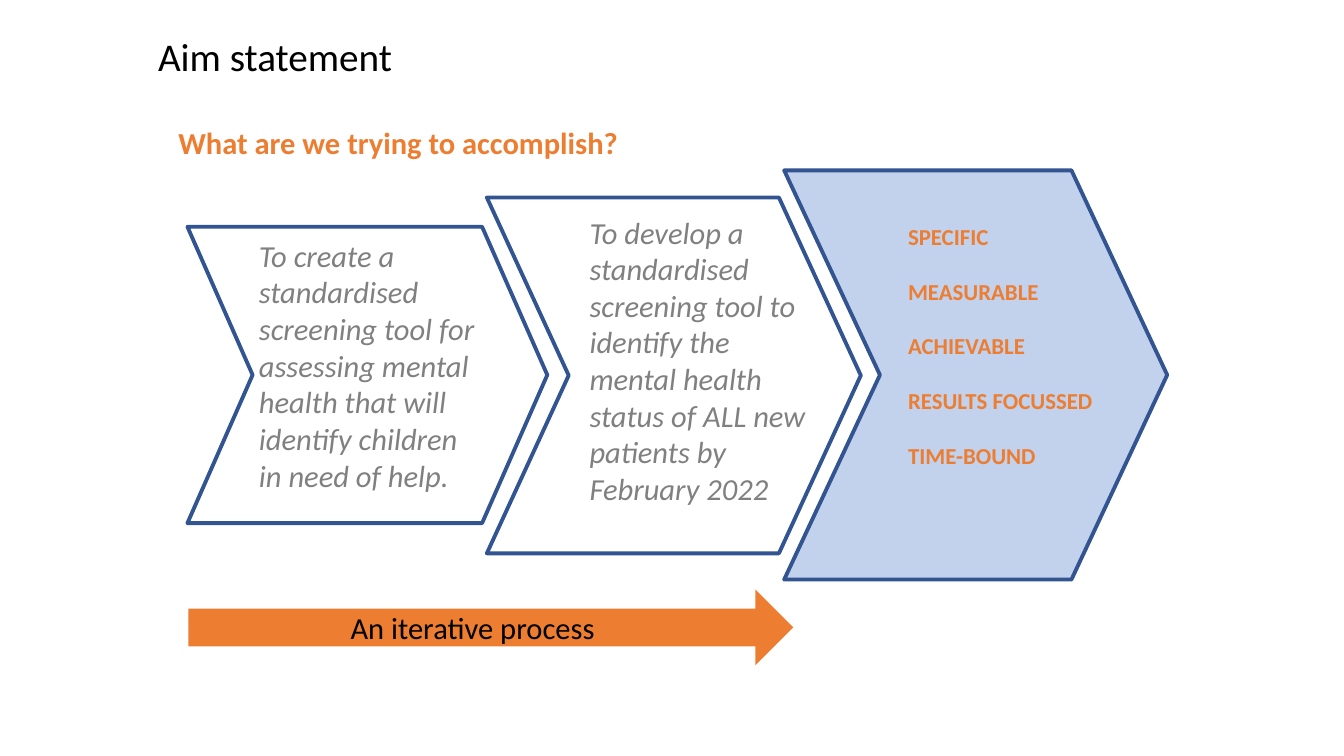
from dataclasses import dataclass

from lxml.etree import SubElement
from pptx import Presentation
from pptx.dml.color import RGBColor
from pptx.enum.shapes import MSO_SHAPE as Preset
from pptx.enum.text import MSO_ANCHOR as Anchor
from pptx.oxml.ns import qn
from pptx.util import Emu, Pt

EMU_PER_PX = 9144
CENTRE_Y = 372


@dataclass(frozen=True)
class Theme:
    """Colours, font and type sizes of the slide."""
    font: str = "Calibri"
    black: str = "000000"
    grey: str = "808080"
    orange: str = "ED7D31"
    blue: str = "4472C4"
    outline: str = "325491"
    title: float = 28
    body: float = 21.8
    small: float = 16.3
    line: float = 2.75


THEME = Theme()


def px(*lengths):
    """Convert pixel lengths to EMU."""
    return [Emu(length * EMU_PER_PX) for length in lengths]


def add_text(slide, box, text, size, color, bold=False, italic=False):
    """Add a wrapped text box with one paragraph per line of text."""
    frame = slide.shapes.add_textbox(*px(*box)).text_frame
    frame.word_wrap = True
    frame.text = text
    for paragraph in frame.paragraphs:
        for run in paragraph.runs:
            font = run.font
            font.name, font.size = THEME.font, Pt(size)
            font.bold, font.italic = bold, italic
            font.color.rgb = RGBColor.from_string(color)
    return frame


def add_preset(slide, preset, box, fill=None, opacity=100):
    """Add a shadowless preset shape with an optional translucent fill."""
    shape = slide.shapes.add_shape(preset, *px(*box))
    shape.shadow.inherit = False
    shape.line.fill.background()
    if fill is None:
        shape.fill.background()
        return shape
    shape.fill.solid()
    shape.fill.fore_color.rgb = RGBColor.from_string(fill)
    if opacity < 100:
        color = shape.fill._xPr.find(qn("a:solidFill"))[0]
        SubElement(color, qn("a:alpha")).set("val", str(opacity * 1000))
    return shape


def add_chevron(slide, left, width, height, notch, fill=None, opacity=100):
    """Add an outlined chevron centred on the common axis."""
    box = (left, CENTRE_Y - height // 2, width, height)
    chevron = add_preset(slide, Preset.CHEVRON, box, fill, opacity)
    chevron.adjustments[0] = notch
    chevron.line.color.rgb = RGBColor.from_string(THEME.outline)
    chevron.line.width = Pt(THEME.line)


def add_title(slide, text):
    """Add the vertically centred slide title."""
    frame = add_text(slide, (147, 12, 1043, 93), text, THEME.title, THEME.black)
    frame.vertical_anchor = Anchor.MIDDLE
    frame.paragraphs[0].line_spacing = 0.9
    frame.paragraphs[0].space_before = Pt(10)


def add_criteria(slide, criteria):
    """Add the evenly spaced list of criteria."""
    frame = add_text(slide, (891, 216, 258, 285), "\n".join(criteria),
                     THEME.small, THEME.orange, bold=True)
    for paragraph in frame.paragraphs:
        paragraph.space_after = Pt(19.5)


def main():
    """Build and save the slide."""
    presentation = Presentation()
    presentation.slide_width, presentation.slide_height = Emu(12192000), Emu(6858000)
    slide = presentation.slides.add_slide(presentation.slide_layouts[6])

    add_title(slide, "Aim statement")
    add_preset(slide, Preset.RIGHT_ARROW, (187, 585, 600, 75), THEME.orange)
    add_chevron(slide, 483, 371, 353, 0.23)
    add_chevron(slide, 186, 357, 294, 0.22)
    add_chevron(slide, 778, 380, 406, 0.25, THEME.blue, 32)

    add_text(slide, (338, 599, 364, 47), "An iterative process",
             THEME.body, THEME.black)
    add_criteria(slide, ["SPECIFIC", "MEASURABLE", "ACHIEVABLE",
                         "RESULTS FOCUSSED", "TIME-BOUND"])
    add_text(slide, (575, 207, 241, 303),
             "To develop a standardised screening tool to identify the mental "
             "health status of ALL new patients by February 2022",
             THEME.body, THEME.grey, italic=True)
    add_text(slide, (247, 230, 235, 267),
             "To create a standardised screening tool for assessing mental "
             "health that will identify children in need of help.",
             THEME.body, THEME.grey, italic=True)
    add_text(slide, (167, 118, 579, 47), "What are we trying to accomplish?",
             THEME.body, THEME.orange, bold=True)

    presentation.save("out.pptx")


if __name__ == "__main__":
    main()
